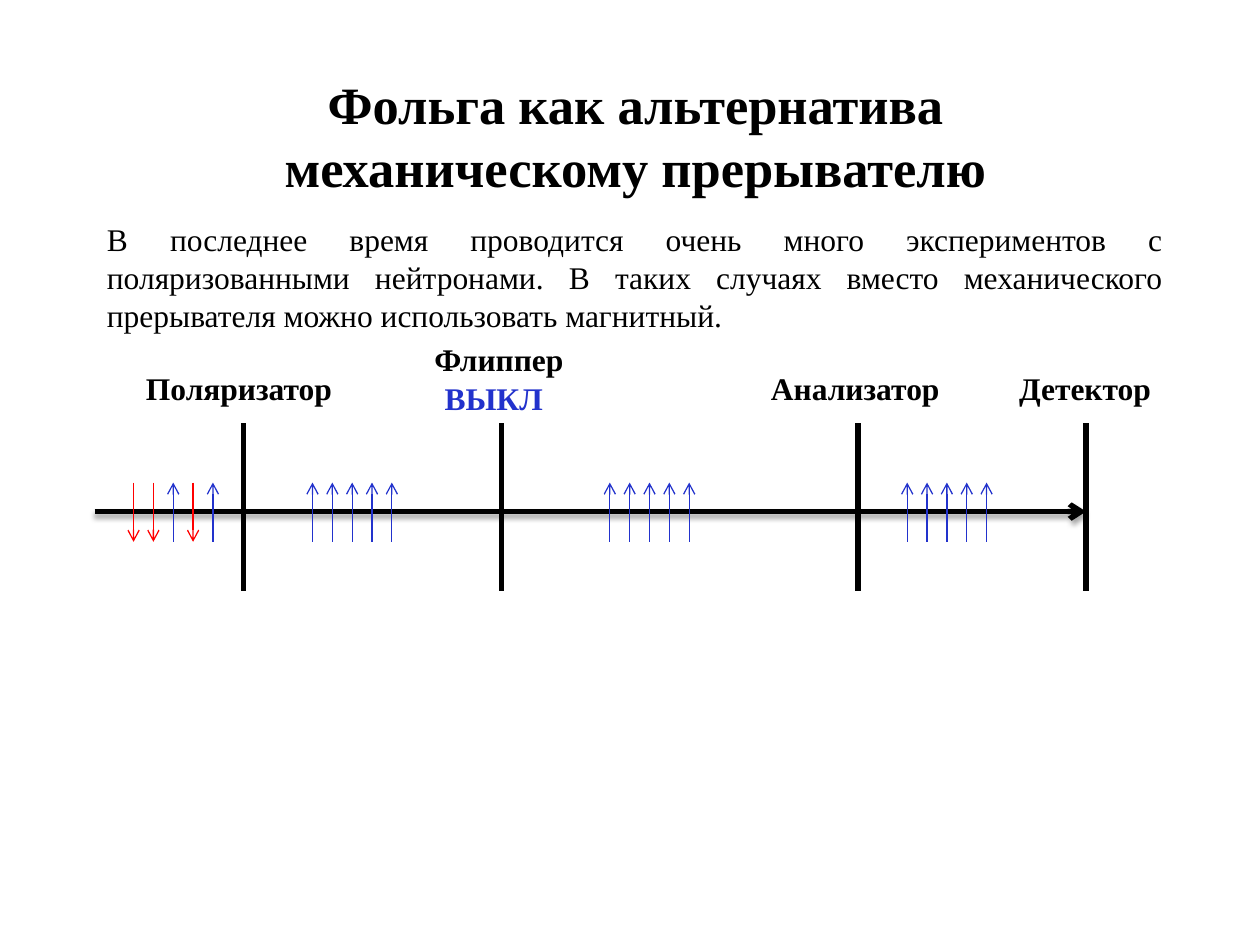
from lxml import etree
from pptx import Presentation
from pptx import util as u
from pptx.dml import color
from pptx.enum import shapes, text
from pptx.oxml import ns

COLORS = {"ink": "000000", "up": "2232CC", "down": "FF0000"}
FONT = "Times New Roman"
SPIN_STEP = 0.1575


def add_node(parent, tag, **attributes):
    """Append a DrawingML element and return it."""
    return etree.SubElement(parent, ns.qn(tag), attributes)


def add_line(slide, start, end, shade, width, arrow=False, shadow=False):
    """Draw a straight line, optionally with an arrowhead and a soft shadow."""
    points = [u.Inches(value) for value in (*start, *end)]
    line = slide.shapes.add_connector(shapes.MSO_CONNECTOR.STRAIGHT, *points)
    line.line.color.rgb = color.RGBColor.from_string(COLORS[shade])
    line.line.width = u.Pt(width)
    properties = line._element.spPr
    if arrow:
        add_node(properties.find(ns.qn("a:ln")), "a:tailEnd", type="arrow")
    effects = add_node(properties, "a:effectLst")
    if shadow:
        outer = add_node(effects, "a:outerShdw", blurRad=str(u.Pt(3.1)),
                         dist=str(u.Pt(1.8)), dir="5400000", rotWithShape="0")
        tint = add_node(outer, "a:srgbClr", val=COLORS["ink"])
        add_node(tint, "a:alpha", val="35000")


def write(shape, wording, size, shade="ink", bold=True, align=text.PP_ALIGN.LEFT, wrap=True):
    """Fill a text shape with one formatted paragraph."""
    frame = shape.text_frame
    frame.text = wording
    frame.word_wrap = wrap
    frame.auto_size = text.MSO_AUTO_SIZE.NONE
    frame.vertical_anchor = text.MSO_ANCHOR.TOP
    paragraph = frame.paragraphs[0]
    paragraph.alignment = align
    font = paragraph.runs[0].font
    font.name, font.size, font.bold = FONT, u.Pt(size), bold
    font.color.rgb = color.RGBColor.from_string(COLORS[shade])


def add_title(slide, box):
    """Place the slide title."""
    title = slide.shapes.title
    title.left, title.top, title.width, title.height = map(u.Inches, box)
    write(title, "Фольга как альтернатива механическому прерывателю", 30,
          align=text.PP_ALIGN.CENTER)


def add_intro(slide, box):
    """Place the justified introduction."""
    intro = slide.shapes.add_textbox(*map(u.Inches, box))
    write(intro, "В последнее время проводится очень много экспериментов с "
          "поляризованными нейтронами. В таких случаях вместо механического "
          "прерывателя можно использовать магнитный.", 18, bold=False,
          align=text.PP_ALIGN.JUSTIFY)


def add_spins(slide, left, top, height, directions):
    """Draw an evenly spaced group of spin arrows."""
    for index, direction in enumerate(directions):
        x = left + index * SPIN_STEP
        ends = [(x, top), (x, top + height)]
        if direction == "up":
            ends.reverse()
        add_line(slide, *ends, direction, 0.75, arrow=True)


def add_beamline(slide, box):
    """Draw the beam, its devices with their labels, and the neutron spins."""
    left, top, width, height = box
    beam = top + 1.41
    add_line(slide, (left, beam), (left + width, beam), "ink", 3, arrow=True, shadow=True)
    for offset in (1.18, 3.23, 6.06, width):
        x = left + offset
        add_line(slide, (x, top + 0.71), (x, top + height), "ink", 3)
    labels = [("Поляризатор", 0.31, 0.23, 1.69, "ink"),
              ("Флиппер", 2.6, 0, 1.24, "ink"),
              ("ВЫКЛ", 2.68, 0.31, 0.99, "up"),
              ("Анализатор", 5.27, 0.23, 1.55, "ink"),
              ("Детектор", 7.24, 0.23, 1.26, "ink")]
    for wording, x, y, label_width, shade in labels:
        label_box = (left + x, top + y, label_width, 0.4)
        label = slide.shapes.add_textbox(*map(u.Inches, label_box))
        write(label, wording, 18, shade, wrap=False)
    mixed = ["down", "down", "up", "down", "up"]
    polarized = ["up"] * 5
    groups = [(0.31, mixed), (1.73, polarized), (4.09, polarized), (6.45, polarized)]
    for offset, directions in groups:
        add_spins(slide, left + offset, top + 1.18, 0.47, directions)


def main():
    """Build and save the slide."""
    deck = Presentation()
    deck.slide_width, deck.slide_height = u.Inches(10), u.Inches(7.5)
    slide = deck.slides.add_slide(deck.slide_layouts[5])
    add_title(slide, (1.54, 0.52, 7.01, 1.41))
    add_intro(slide, (0.75, 1.7, 8.58, 1.01))
    add_beamline(slide, (0.75, 2.65, 7.87, 2.04))
    deck.save("out.pptx")


if __name__ == "__main__":
    main()
